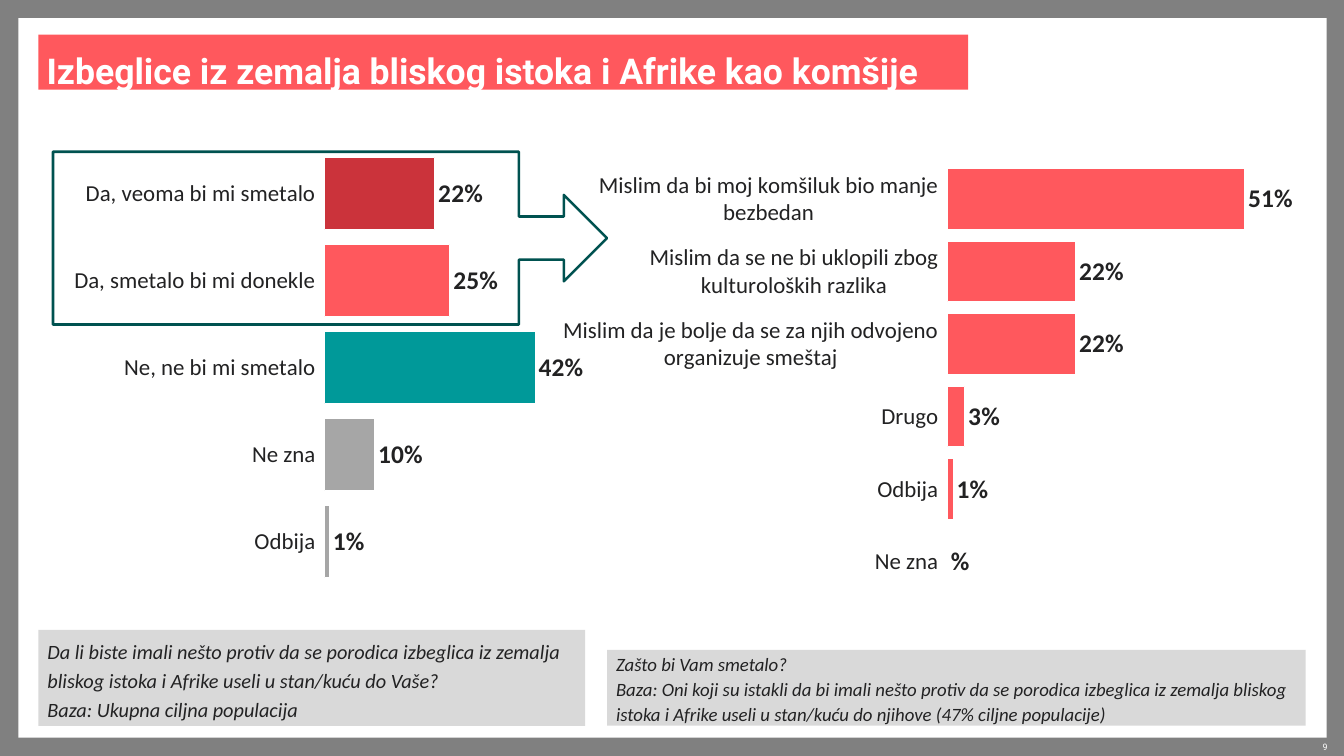
from lxml import etree
from pptx import Presentation
from pptx.chart.data import CategoryChartData
from pptx.dml.color import RGBColor
from pptx.enum.chart import (XL_CHART_TYPE, XL_LABEL_POSITION, XL_TICK_LABEL_POSITION,
                             XL_TICK_MARK)
from pptx.enum.shapes import MSO_SHAPE
from pptx.enum.text import MSO_ANCHOR, PP_ALIGN
from pptx.oxml.ns import qn
from pptx.util import Inches, Pt

BAR_CLUSTERED = XL_CHART_TYPE.BAR_CLUSTERED
OUTSIDE_END = XL_LABEL_POSITION.OUTSIDE_END
NO_LABELS = XL_TICK_LABEL_POSITION.NONE
NO_TICKS, TICKS_OUT = XL_TICK_MARK.NONE, XL_TICK_MARK.OUTSIDE
RECTANGLE, ARROW_CALLOUT = MSO_SHAPE.RECTANGLE, MSO_SHAPE.RIGHT_ARROW_CALLOUT
MIDDLE = MSO_ANCHOR.MIDDLE
LEFT, RIGHT = PP_ALIGN.LEFT, PP_ALIGN.RIGHT

WHITE, INK, GREY, PALE_GREY = "FFFFFF", "222223", "808080", "D9D9D9"
CORAL, RED, TEAL, MID_GREY, DARK_TEAL = "FF585D", "CB333B", "009999", "A6A6A6", "005250"
BODY_FONT, TITLE_FONT = "Calibri", "Roboto"

NEIGHBOUR_ANSWERS = {
    "Da, veoma bi mi smetalo": 22,
    "Da, smetalo bi mi donekle": 25,
    "Ne, ne bi mi smetalo": 42,
    "Ne zna": 10,
    "Odbija": 1,
}
REASONS = {
    "Mislim da bi moj komšiluk bio manje bezbedan": 51,
    "Mislim da se ne bi uklopili zbog kulturoloških razlika": 22,
    "Mislim da je bolje da se za njih odvojeno organizuje smeštaj": 22,
    "Drugo": 3,
    "Odbija": 1,
    "Ne zna": 0,
}


def rgb(colour):
    return RGBColor.from_string(colour)


def paint(fill, colour):
    fill.solid()
    fill.fore_color.rgb = rgb(colour)


def outline(line, colour, width):
    line.color.rgb = rgb(colour)
    line.width = Pt(width)


def style_font(font, size, colour=INK, name=BODY_FONT, bold=False, italic=False):
    font.name, font.size = name, Pt(size)
    font.bold, font.italic = bold, italic
    font.color.rgb = rgb(colour)


def set_margins(frame, left, top, right, bottom):
    frame.margin_left, frame.margin_top = Inches(left), Inches(top)
    frame.margin_right, frame.margin_bottom = Inches(right), Inches(bottom)


def place(shape, box):
    shape.left, shape.top, shape.width, shape.height = map(Inches, box)


def add_block(slide, box, colour):
    block = slide.shapes.add_shape(RECTANGLE, *map(Inches, box))
    block.shadow.inherit = False
    paint(block.fill, colour)
    block.line.fill.background()
    return block


def add_panel(slide):
    panel = add_block(slide, (0.2, 0.2, 14.31, 7.87), WHITE)
    slide.shapes.element.insert(2, panel.element)  # behind the title


def add_title(slide, wording):
    title = slide.shapes.title
    place(title, (0.42, 0.38, 10.17, 0.6))
    paint(title.fill, CORAL)
    frame = title.text_frame
    frame.word_wrap = False
    frame.vertical_anchor = MIDDLE
    set_margins(frame, 0.09, 0.08, 0.09, 0)
    paragraph = frame.paragraphs[0]
    paragraph.alignment, paragraph.line_spacing = LEFT, Pt(41)
    run = paragraph.add_run()
    run.text = wording
    style_font(run.font, 28, WHITE, TITLE_FONT, bold=True)


def add_question(slide, box, lines, size, spacing):
    frame = add_block(slide, box, PALE_GREY).text_frame
    frame.word_wrap = True
    frame.vertical_anchor = MIDDLE
    set_margins(frame, 0.1, 0, 0.1, 0)
    for index, wording in enumerate(lines):
        paragraph = frame.add_paragraph() if index else frame.paragraphs[0]
        paragraph.alignment, paragraph.line_spacing = LEFT, spacing
        run = paragraph.add_run()
        run.text = wording
        style_font(run.font, size, italic=True)


def add_page_number(slide, number):
    frame = slide.shapes.add_textbox(*map(Inches, (13.73, 8.1, 0.79, 0.13))).text_frame
    frame.word_wrap = True
    set_margins(frame, 0, 0, 0, 0)
    paragraph = frame.paragraphs[0]
    paragraph.alignment, paragraph.line_spacing = RIGHT, 1.1
    run = paragraph.add_run()
    run.text = number
    style_font(run.font, 7, WHITE, TITLE_FONT)


def set_plot_layout(chart, x, y, w, h):
    plot_area = chart.element.find(".//" + qn("c:plotArea"))
    for old_layout in plot_area.findall(qn("c:layout")):
        plot_area.remove(old_layout)
    layout = etree.Element(qn("c:layout"))
    manual = etree.SubElement(layout, qn("c:manualLayout"))
    settings = {"layoutTarget": "inner", "xMode": "edge", "yMode": "edge",
                "x": x, "y": y, "w": w, "h": h}
    for tag, value in settings.items():
        etree.SubElement(manual, qn("c:" + tag)).set("val", str(value))
    plot_area.insert(0, layout)


def add_bars(slide, box, answers, axis_max, plot_width, bar_colours):
    data = CategoryChartData()
    data.categories = list(answers)
    data.add_series("Series 1", list(answers.values()))
    chart = slide.shapes.add_chart(BAR_CLUSTERED, *map(Inches, box), data).chart
    chart.has_legend = chart.has_title = False
    style_font(chart.font, 18, name=TITLE_FONT)
    set_plot_layout(chart, 0.523, 0.006, plot_width, 0.994)

    # Axes
    categories, values = chart.category_axis, chart.value_axis
    categories.reverse_order = True
    categories.major_tick_mark = TICKS_OUT
    style_font(categories.tick_labels.font, 18)
    values.minimum_scale, values.maximum_scale = 0, axis_max
    values.major_tick_mark = NO_TICKS
    values.tick_label_position = NO_LABELS
    for axis in (categories, values):
        axis.has_major_gridlines = False
        axis.minor_tick_mark = NO_TICKS
        axis.format.line.fill.background()

    # Bars and their labels
    plot = chart.plots[0]
    plot.gap_width, plot.vary_by_categories = 20, False
    series = plot.series[0]
    paint(series.format.fill, CORAL)
    outline(series.format.line, WHITE, 0.75)
    for index, colour in bar_colours.items():
        bar = series.points[index].format
        paint(bar.fill, colour)
        outline(bar.line, WHITE, 0.75)
    labels = series.data_labels
    labels.show_value, labels.position = True, OUTSIDE_END
    labels.number_format, labels.number_format_is_linked = '#"%"', False
    style_font(labels.font, 20, bold=True)


def add_callout(slide):
    callout = slide.shapes.add_shape(ARROW_CALLOUT, *map(Inches, (0.58, 1.66, 6.06, 1.89)))
    callout.shadow.inherit = False
    callout.fill.background()
    outline(callout.line, DARK_TEAL, 2)
    for index, ratio in enumerate((0.25, 0.25, 0.25, 0.841)):
        callout.adjustments[index] = ratio


def main():
    deck = Presentation()
    deck.slide_width, deck.slide_height = Inches(14.7), Inches(8.27)
    slide = deck.slides.add_slide(deck.slide_layouts[5])

    # Frame and title
    paint(slide.background.fill, GREY)
    add_panel(slide)
    add_page_number(slide, "9")
    add_title(slide, "Izbeglice iz zemalja bliskog istoka i Afrike kao komšije")

    # Survey questions
    add_question(slide, (0.42, 6.89, 5.98, 1.05), (
        "Da li biste imali nešto protiv da se porodica izbeglica iz zemalja bliskog istoka "
        "i Afrike useli u stan/kuću do Vaše?",
        "Baza: Ukupna ciljna populacija"), 16, 1.2)
    add_question(slide, (6.64, 7.11, 7.64, 0.83), (
        "Zašto bi Vam smetalo?",
        "Baza: Oni koji su istakli da bi imali nešto protiv da se porodica izbeglica iz zemalja "
        "bliskog istoka i Afrike useli u stan/kuću do njihove (47% ciljne populacije)"), 14.8, 1.1)

    # Answers, with the callout leading from the objections to the reasons
    add_bars(slide, (6.03, 1.75, 8.28, 4.79), REASONS, 60, 0.462, {})
    add_bars(slide, (0.42, 1.61, 5.98, 4.79), NEIGHBOUR_ANSWERS, 45, 0.413,
             {0: RED, 2: TEAL, 3: MID_GREY, 4: MID_GREY})
    add_callout(slide)
    deck.save("out.pptx")


if __name__ == "__main__":
    main()
